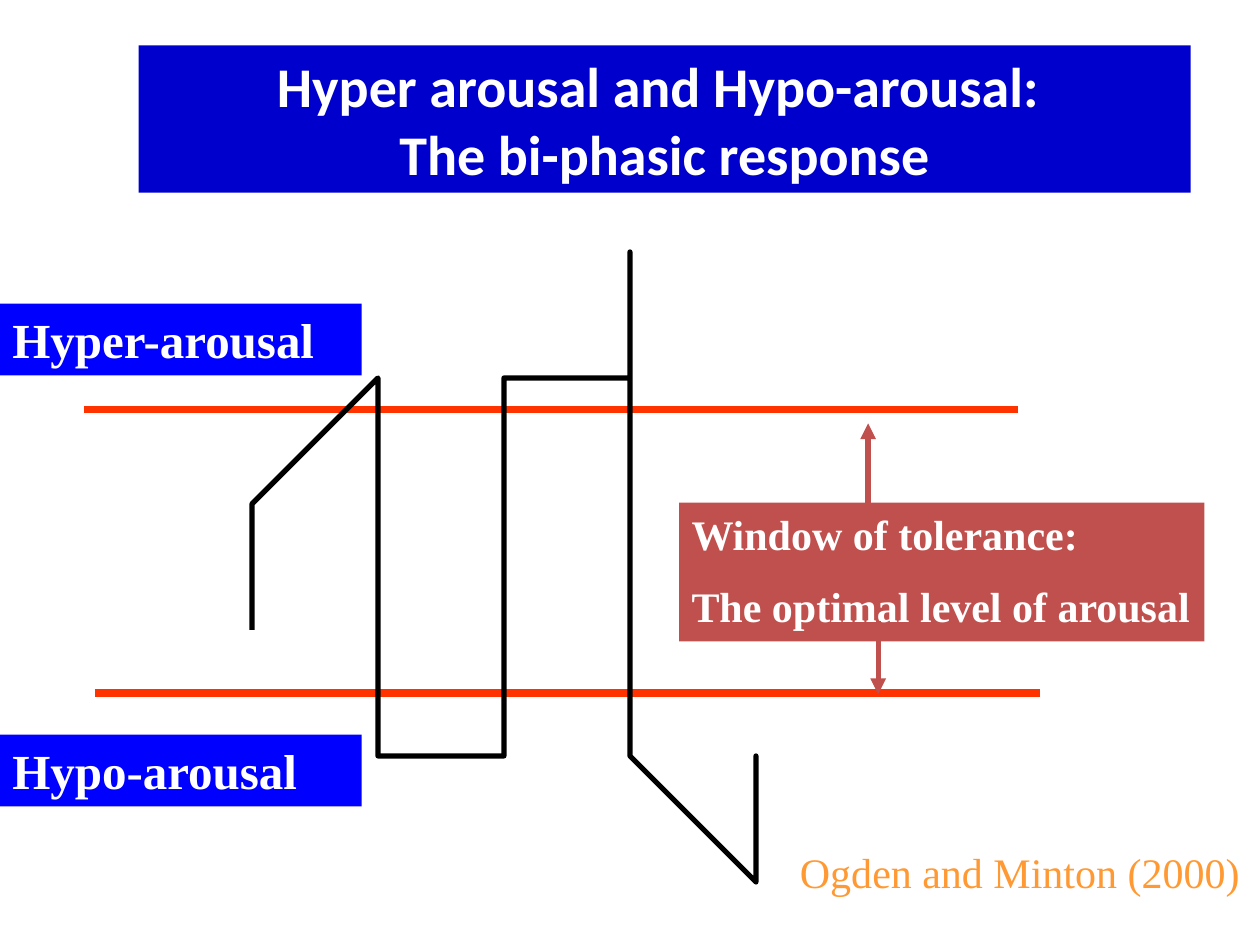
from lxml import etree
from pptx import Presentation
from pptx.dml.color import RGBColor
from pptx.enum import shapes, text
from pptx.oxml.ns import qn
from pptx.util import Inches, Pt

COLORS = {"title": "0000CC", "label": "0000FF", "window": "C0504D", "limit": "FF3300",
          "curve": "000000", "white": "FFFFFF", "source": "FF9933"}
SERIF = "Times New Roman"

TITLE = ["Hyper arousal and Hypo-arousal: ", "The bi-phasic response"]
TITLE_BOX = (1.1, 0.36, 8.35, 1.17)

# lines, box (left, top, width, height), fill, text colour, size, bold
TEXT_BOXES = [
    (["Window of tolerance:", "The optimal level of arousal"],
     (5.39, 3.99, 4.17, 1.1), "window", "white", 24, True),
    (["Hyper-arousal"], (0, 2.41, 2.87, 0.57), "label", "white", 28, True),
    (["Hypo-arousal"], (0, 5.83, 2.87, 0.57), "label", "white", 28, True),
    (["Ogden and Minton (2000)"], (6.25, 6.67, 3.75, 0.5), None, "source", 24, False),
]

# start, end, colour, width
LIMITS = [((0.67, 3.25), (8.08, 3.25), "limit", 4.5),
          ((0.75, 5.5), (8.25, 5.5), "limit", 4.5)]
ARROWS = [((6.89, 4.11), (6.89, 3.36), "window", 3),
          ((6.97, 4.93), (6.97, 5.51), "window", 3)]

# Turning points of the arousal curve, phase by phase
CURVE = {
    "rise": [(1.77, 4.68), (1.97, 4.09), (2, 3.83), (2.05, 3.66), (2.16, 3.82),
             (2.31, 3.92), (2.34, 4), (2.45, 3.75), (2.56, 3.15), (2.65, 2.9)],
    "first peak": [(2.71, 3), (2.85, 3.07), (2.96, 2.61), (3.07, 2.87), (3.13, 2.78),
                   (3.16, 2.55), (3.2, 2.69)],
    "fall": [(3.27, 3.63), (3.24, 3.71), (3.27, 3.8), (3.3, 4.6), (3.19, 5.7), (3.27, 6.3)],
    "first low": [(3.32, 6.13), (3.41, 6.18), (3.61, 6.47), (3.7, 6.16), (3.84, 6.44),
                  (3.93, 6.07), (4.07, 6.41)],
    "second rise": [(4.15, 5.19), (4.21, 4.8), (4.35, 3.44), (4.52, 2.9), (4.61, 2.16)],
    "second peak": [(4.63, 2.47), (4.78, 2.02), (4.83, 2.5), (4.97, 2.07), (5, 2.22),
                    (5.09, 2.13), (5.03, 2.44)],
    "second fall": [(5.06, 3.1), (5.12, 3.75), (5.14, 5.39), (5.11, 6.12), (5.14, 5.96)],
    "second low": [(5.57, 6.55), (5.6, 6.64), (5.57, 6.21), (5.8, 6.58), (5.88, 6.27)],
}


def rgb(name):
    return RGBColor.from_string(COLORS[name])


def add_run(paragraph, words, font, size, color, bold):
    run = paragraph.add_run()
    run.text = words
    run.font.name, run.font.size, run.font.bold = font, Pt(size), bold
    run.font.color.rgb = rgb(color)


def add_box(slide, box, fill):
    position = [Inches(value) for value in box]
    if fill is None:
        shape = slide.shapes.add_textbox(*position)
    else:
        shape = slide.shapes.add_shape(shapes.MSO_SHAPE.RECTANGLE, *position)
        shape.shadow.inherit = False
        shape.fill.solid()
        shape.fill.fore_color.rgb = rgb(fill)
        shape.line.fill.background()
    shape.text_frame.word_wrap = True
    return shape


def add_title(slide):
    frame = add_box(slide, TITLE_BOX, "title").text_frame
    frame.vertical_anchor = text.MSO_ANCHOR.MIDDLE
    paragraph = frame.paragraphs[0]
    paragraph.alignment = text.PP_ALIGN.CENTER
    for index, line in enumerate(TITLE):
        if index:
            paragraph.add_line_break()
        add_run(paragraph, line, "Calibri", 32, "white", True)


def add_text_box(slide, lines, box, fill, color, size, bold):
    frame = add_box(slide, box, fill).text_frame
    frame.vertical_anchor = text.MSO_ANCHOR.TOP
    frame.auto_size = text.MSO_AUTO_SIZE.SHAPE_TO_FIT_TEXT
    for index, line in enumerate(lines):
        paragraph = frame.add_paragraph() if index else frame.paragraphs[0]
        paragraph.alignment = text.PP_ALIGN.LEFT
        # Space before as half a line
        properties = paragraph._p.get_or_add_pPr()
        before = etree.SubElement(properties, qn("a:spcBef"))
        etree.SubElement(before, qn("a:spcPct"), val="50000")
        add_run(paragraph, line, SERIF, size, color, bold)


def add_line(slide, start, end, color, width, arrow=False):
    ends = [Inches(value) for value in start + end]
    connector = slide.shapes.add_connector(shapes.MSO_CONNECTOR.STRAIGHT, *ends)
    connector.line.color.rgb = rgb(color)
    connector.line.width = Pt(width)
    if arrow:
        etree.SubElement(connector.line._get_or_add_ln(), qn("a:tailEnd"), type="triangle")
    etree.SubElement(connector._element.spPr, qn("a:effectLst"))


def add_curve(slide):
    start, *points = [point for phase in CURVE.values() for point in phase]
    builder = slide.shapes.build_freeform(*start, scale=Inches(1))
    builder.add_line_segments(points, close=False)
    shape = builder.convert_to_shape()
    shape.shadow.inherit = False
    shape.fill.background()
    shape.line.color.rgb = rgb("curve")
    shape.line.width = Pt(3)
    etree.SubElement(shape.line._get_or_add_ln(), qn("a:round"))


def main():
    presentation = Presentation()
    presentation.slide_width, presentation.slide_height = Inches(10), Inches(7.5)
    slide = presentation.slides.add_slide(presentation.slide_layouts[6])
    for limit in LIMITS:
        add_line(slide, *limit)
    add_title(slide)
    for text_box in TEXT_BOXES:
        add_text_box(slide, *text_box)
    for arrow in ARROWS:
        add_line(slide, *arrow, arrow=True)
    add_curve(slide)
    presentation.save("out.pptx")


if __name__ == "__main__":
    main()
